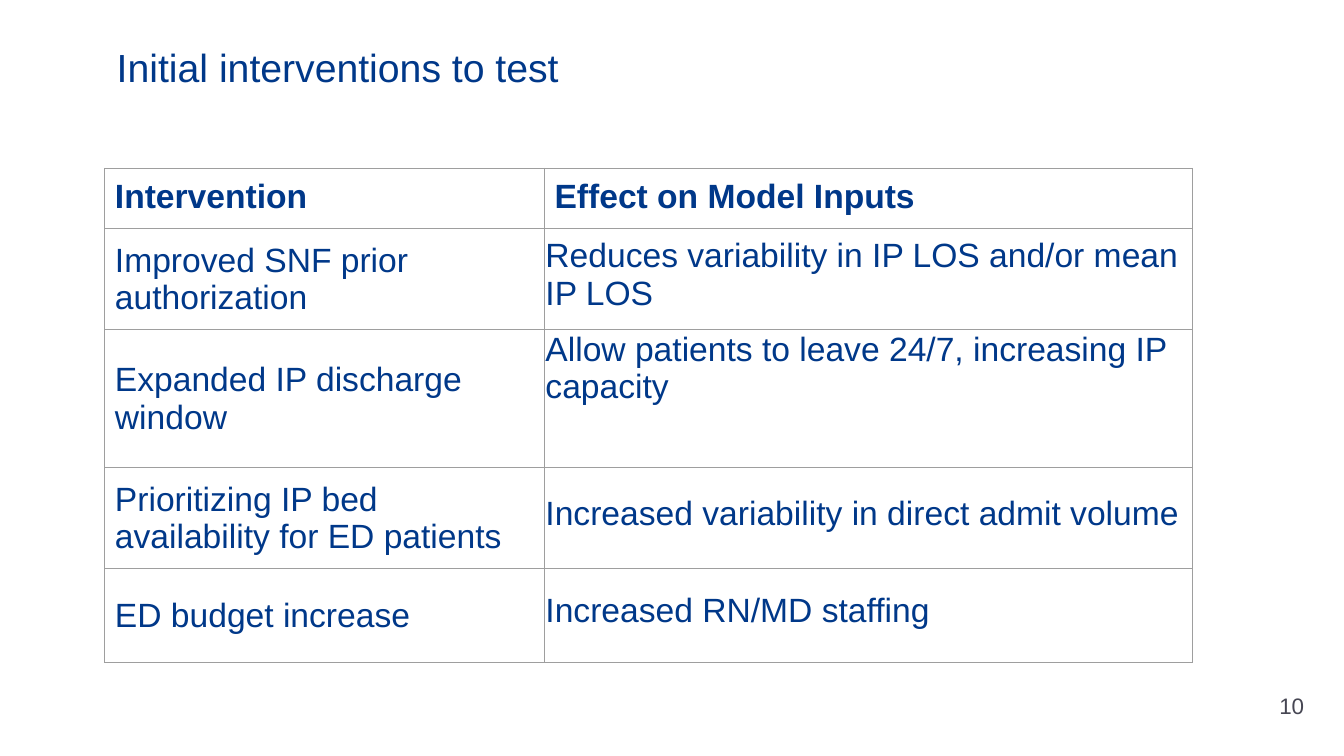
from dataclasses import dataclass

from lxml.etree import SubElement
from pptx import Presentation
from pptx.dml.color import RGBColor
from pptx.enum.text import MSO_ANCHOR as Anchor
from pptx.oxml.ns import qn
from pptx.util import Inches, Pt


@dataclass(frozen=True)
class Theme:
    font: str = "Arial"
    navy: str = "003889"
    gray: str = "464653"
    border: str = "9E9E9E"
    title_size: int = 28
    table_size: int = 24
    number_size: int = 16
    border_width: float = 0.75


theme = Theme()


def style(frame, size, color, bold=False):
    frame.word_wrap = True
    for paragraph in frame.paragraphs:
        for run in paragraph.runs:
            run.font.name = theme.font
            run.font.size = Pt(size)
            run.font.bold = bold
            run.font.color.rgb = RGBColor.from_string(color)


def add_borders(cell):
    properties = cell._tc.get_or_add_tcPr()
    for position, side in enumerate(("lnL", "lnR", "lnT", "lnB")):
        line = properties.makeelement(qn(f"a:{side}"), {"w": str(Pt(theme.border_width))})
        fill = SubElement(line, qn("a:solidFill"))
        SubElement(fill, qn("a:srgbClr"), val=theme.border)
        properties.insert(position, line)


presentation = Presentation()
presentation.slide_width = Inches(13.33)
presentation.slide_height = Inches(7.5)
slide = presentation.slides.add_slide(presentation.slide_layouts[6])

# Title
title = slide.shapes.add_textbox(Inches(1.06), Inches(0.38), Inches(11.5), Inches(0.96))
title.text_frame.text = "Initial interventions to test"
style(title.text_frame, theme.title_size, theme.navy)

# Interventions and their effects
interventions = [
    ("Intervention", "Effect on Model Inputs"),
    ("Improved SNF prior authorization", "Reduces variability in IP LOS and/or mean IP LOS"),
    ("Expanded IP discharge window", "Allow patients to leave 24/7, increasing IP capacity"),
    ("Prioritizing IP bed availability for ED patients", "Increased variability in direct admit volume"),
    ("ED budget increase", "Increased RN/MD staffing"),
]
column_widths = [4.36, 6.43]
row_heights = [0.57, 0.94, 1.37, 0.94, 0.93]
top_aligned = {(0, 0), (0, 1), (2, 1)}

table = slide.shapes.add_table(
    len(row_heights), len(column_widths), Inches(1.04), Inches(1.67),
    Inches(sum(column_widths)), Inches(sum(row_heights)),
).table
table.horz_banding = False
for column, width in zip(table.columns, column_widths):
    column.width = Inches(width)

for r, (height, texts) in enumerate(zip(row_heights, interventions)):
    table.rows[r].height = Inches(height)
    for c, text in enumerate(texts):
        cell = table.cell(r, c)
        margin = 0.01 if r > 0 and c == 1 else 0.1
        cell.margin_left = cell.margin_right = cell.margin_top = Inches(margin)
        cell.margin_bottom = Inches(0.1)
        cell.vertical_anchor = Anchor.TOP if (r, c) in top_aligned else Anchor.MIDDLE
        cell.fill.background()
        cell.text_frame.text = text
        style(cell.text_frame, theme.table_size, theme.navy, bold=r == 0)
        add_borders(cell)

# Slide number
number = slide.shapes.add_textbox(Inches(12.59), Inches(6.8), Inches(0.63), Inches(0.4))
number.text_frame.text = "10"
number.text_frame.vertical_anchor = Anchor.MIDDLE
style(number.text_frame, theme.number_size, theme.gray)

presentation.save("out.pptx")
